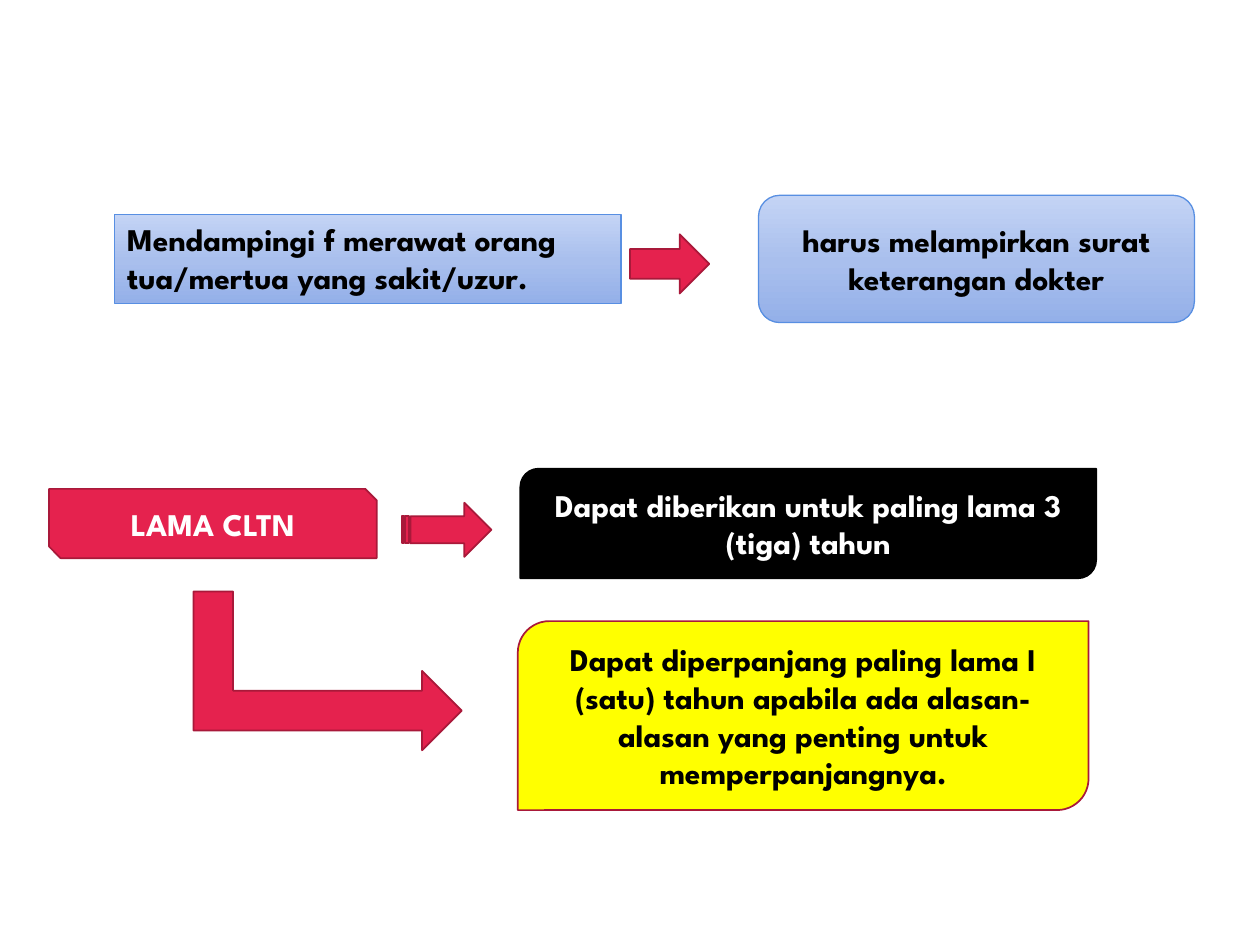
from copy import deepcopy

from pptx import Presentation
from pptx.dml.color import RGBColor
from pptx.enum.shapes import MSO_SHAPE
from pptx.enum.text import MSO_ANCHOR, PP_ALIGN
from pptx.oxml.ns import qn
from pptx.util import Inches, Pt

COLORS = {
    "red": "E5224E", "dark_red": "A9193A", "black": "000000", "white": "FFFFFF",
    "yellow": "FFFF00", "blue_line": "588FE2",
    "blue_top": "C4D4F5", "blue_mid": "A9BFED", "blue_low": "94B0E9",
}
BLUE_STOPS = (("blue_top", 0), ("blue_mid", 0.52), ("blue_low", 1))
FONT = {"name": "League Spartan", "size": Pt(18), "bold": True}
COLS, ROWS = 100, 75
CELL = Inches(10) // COLS


def rgb(name):
    """Return the palette colour with the given name."""
    return RGBColor.from_string(COLORS[name])


def fill_blue(sp):
    """Give a shape the three-stop blue gradient, running downwards."""
    sp.fill.gradient()
    sp.fill.gradient_angle = 270
    stops = sp._element.spPr.find(qn("a:gradFill")).find(qn("a:gsLst"))
    stops.insert(1, deepcopy(stops[0]))
    for stop, (name, position) in zip(sp.fill.gradient_stops, BLUE_STOPS):
        stop.color.rgb = rgb(name)
        stop.position = position


def add_block(s, kind, box, fill="red", line="dark_red", width=1):
    """Add a filled, outlined shape on the slide grid."""
    sp = s.shapes.add_shape(kind, *(round(v * CELL) for v in box))
    sp.shadow.inherit = False
    if fill == "blue":
        fill_blue(sp)
    else:
        sp.fill.solid()
        sp.fill.fore_color.rgb = rgb(fill)
    sp.line.color.rgb = rgb(line)
    sp.line.width = Pt(width)
    return sp


def write(sp, text, color="black", align=PP_ALIGN.CENTER, anchor=MSO_ANCHOR.MIDDLE):
    """Write one bold paragraph in a shape."""
    tf = sp.text_frame
    for key, value in {"word_wrap": True, "vertical_anchor": anchor}.items():
        setattr(tf, key, value)
    p = tf.paragraphs[0]
    p.alignment = align
    r = p.add_run()
    r.text = text
    for key, value in FONT.items():
        setattr(r.font, key, value)
    r.font.color.rgb = rgb(color)


def add_requirement(s, x, y, w, h):
    """Place the reason for leave and the document it requires."""
    blue = {"fill": "blue", "line": "blue_line", "width": 0.75}
    reason = add_block(s, MSO_SHAPE.RECTANGLE, (x, y + (h - 7.1) / 2, 40.2, 7.1), **blue)
    write(reason, "Mendampingi f merawat orang tua/mertua yang sakit/uzur.",
          align=PP_ALIGN.LEFT, anchor=MSO_ANCHOR.TOP)
    letter = add_block(s, MSO_SHAPE.FLOWCHART_ALTERNATE_PROCESS,
                       (x + w - 34.6, y, 34.6, h), **blue)
    write(letter, "harus melampirkan surat keterangan dokter")
    add_block(s, MSO_SHAPE.RIGHT_ARROW, (x + 40.9, y + 3.1, 6.3, 4.7))


def add_duration(s, x, y, w, h):
    """Place the leave duration, its limit and its extension."""
    title = add_block(s, MSO_SHAPE.SNIP_2_DIAG_RECTANGLE, (x, y + 1.6, 26, 5.5))
    write(title, "LAMA CLTN", "white")
    limit = add_block(s, MSO_SHAPE.ROUND_2_DIAG_RECTANGLE,
                      (x + w - 45.7, y, 45.7, 8.7), "black", "black")
    write(limit, "Dapat diberikan untuk paling lama 3 (tiga) tahun", "white")
    extension = add_block(s, MSO_SHAPE.ROUND_2_DIAG_RECTANGLE,
                          (x + 37.2, y + h - 15, 45.3, 15), "yellow")
    write(extension, "Dapat diperpanjang paling lama I (satu) tahun apabila ada "
                     "alasan-alasan yang penting untuk memperpanjangnya.")
    add_block(s, MSO_SHAPE.STRIPED_RIGHT_ARROW, (x + 28, y + 2.7, 7.1, 4.3))
    bent = add_block(s, MSO_SHAPE.BENT_UP_ARROW, (x + 15.8, y + 5.4, 12.6, 21.3))
    bent.rotation = 90


def main():
    """Build the leave rules slide."""
    prs = Presentation()
    prs.slide_width, prs.slide_height = COLS * CELL, ROWS * CELL
    s = prs.slides.add_slide(prs.slide_layouts[6])
    add_requirement(s, 9.1, 15.5, 85.7, 10.1)
    add_duration(s, 3.9, 37.2, 83.1, 27.1)
    prs.save("out.pptx")


if __name__ == "__main__":
    main()
